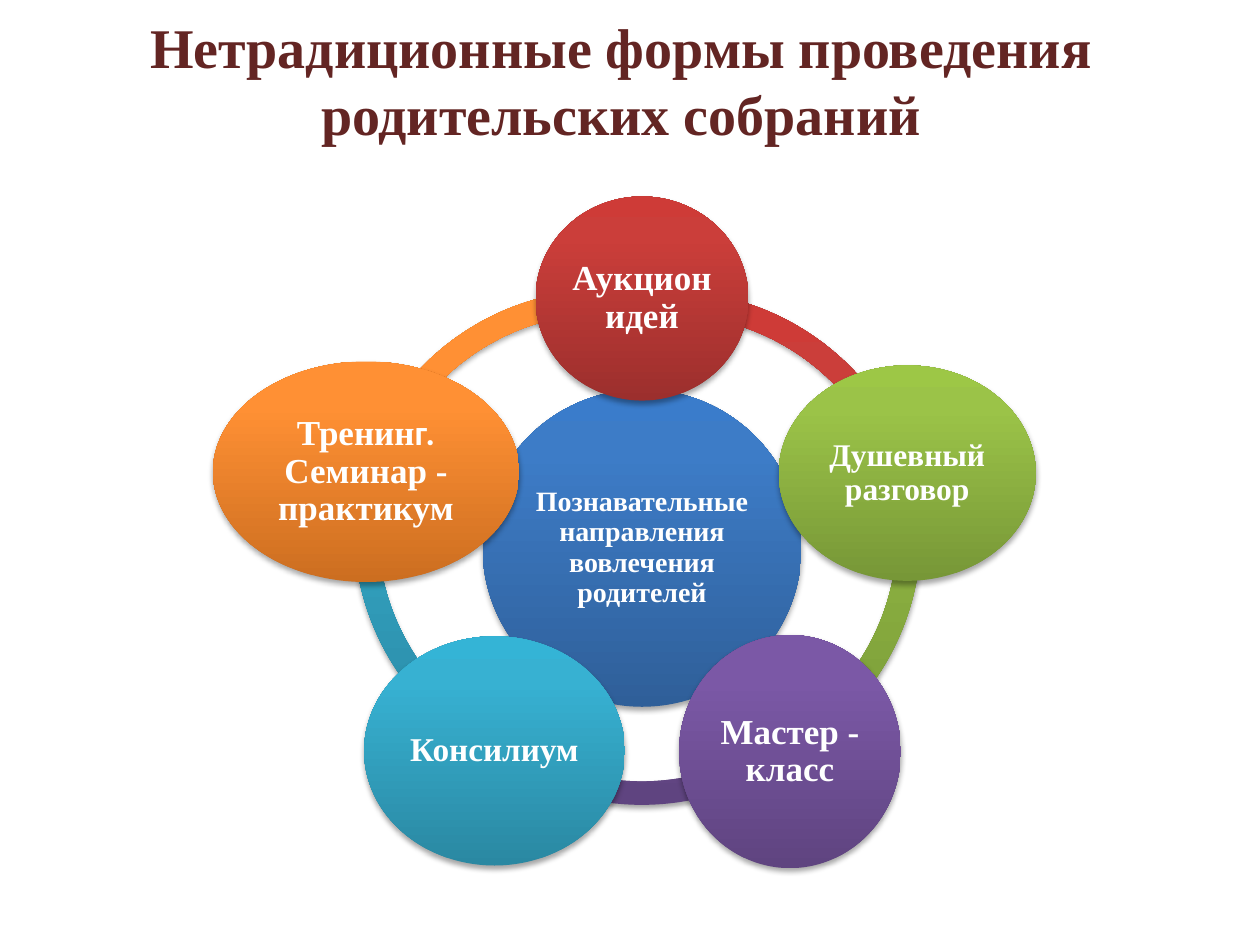
from dataclasses import dataclass, field

import lxml.etree
import pptx
import pptx.dml.color
import pptx.enum.shapes
import pptx.enum.text
import pptx.oxml.ns
import pptx.util

Pt = pptx.util.Pt
RGB = pptx.dml.color.RGBColor.from_string
SHAPE = pptx.enum.shapes.MSO_SHAPE
MIDDLE = pptx.enum.text.MSO_ANCHOR.MIDDLE
CENTER = pptx.enum.text.PP_ALIGN.CENTER


@dataclass(frozen=True)
class Theme:
    font: str = "Times New Roman"
    accent_font: str = "Calibri"
    title_size: int = 32
    title_color: str = "632523"
    label_color: str = "FFFFFF"
    shadow_color: str = "000000"
    # Gradient stops at 0, 80 and 100 percent, from bottom to top.
    gradients: dict = field(default_factory=lambda: {
        "blue": ("2F5F99", "3D7CC7", "3A7CCB"),
        "red": ("9C2F2D", "CB3E3A", "CE3B37"),
        "green": ("779737", "9BC348", "9DC746"),
        "purple": ("5F4480", "7B58A6", "7C57A8"),
        "teal": ("2A88A2", "37B1D2", "34B4D6"),
        "orange": ("CC6E20", "FF9034", "FF9136"),
    })


THEME = Theme()
ARC_SIZE = 293
ARC_THICKNESS = 0.046

# Colour, left, top, start and end of each ring segment.
RING = [
    ("orange", 79.4, 57.6, 118.25, 166.98),
    ("teal", 82.3, 47.5, 70.5, 115.85),
    ("purple", 100.3, 59, 32.4, 75.6),
    ("green", 113.3, 50.4, 207.45, 36.08),
    ("red", 115.4, 58.3, 158.4, 205.57),
]

# Colour, left, top, width, height, type size, label runs (text, font).
CIRCLES = [
    ("blue", 155.8, 114.5, 182.2, 181.4, 16,
     [("Познавательные направления вовлечения родителей", THEME.font)]),
    ("red", 186, 4.3, 121.7, 116.6, 20, [("Аукцион идей", THEME.font)]),
    ("green", 325, 100.8, 146.9, 123.1, 18, [("Душевный разговор", THEME.font)]),
    ("purple", 268.1, 254.9, 126.7, 133.2, 20, [("Мастер - класс", THEME.font)]),
    ("teal", 88.1, 255.6, 149, 131, 19, [("Консилиум", THEME.font)]),
    ("orange", 1.7, 98.6, 175, 126, 20,
     [("Тренин", THEME.font), ("г. ", THEME.accent_font),
      ("Семинар - практикум", THEME.font)]),
]


def add_xml(parent, tag, **attributes):
    return lxml.etree.SubElement(parent, pptx.oxml.ns.qn(tag), attributes)


def add_color(parent, color):
    return add_xml(parent, "a:srgbClr", val=color)


def style_glossy(shape, color):
    """Give the shape a three-stop vertical gradient and a soft shadow below."""
    shape.fill.gradient()
    shape.fill.gradient_angle = 90
    shape.line.fill.background()
    shape.shadow.inherit = False

    properties = shape._element.spPr
    stops = properties.find(".//" + pptx.oxml.ns.qn("a:gsLst"))
    for stop in list(stops):
        stops.remove(stop)
    for position, stop_color in zip((0, 80, 100), THEME.gradients[color]):
        add_color(add_xml(stops, "a:gs", pos=str(position * 1000)), stop_color)

    effects = properties.find(pptx.oxml.ns.qn("a:effectLst"))
    shadow = add_xml(effects, "a:outerShdw", blurRad=str(Pt(3.1)), dist=str(Pt(1.8)),
                     dir="5400000", rotWithShape="0")
    add_xml(add_color(shadow, THEME.shadow_color), "a:alpha", val="35000")


def add_title(slide, left, top, width, height):
    title = slide.shapes.add_textbox(Pt(left), Pt(top), Pt(width), Pt(height))
    frame = title.text_frame
    frame.word_wrap = True
    frame.vertical_anchor = MIDDLE
    paragraph = frame.paragraphs[0]
    paragraph.text = "Нетрадиционные формы проведения родительских собраний"
    paragraph.alignment = CENTER
    paragraph.font.name = THEME.font
    paragraph.font.size = Pt(THEME.title_size)
    paragraph.font.bold = True
    paragraph.font.color.rgb = RGB(THEME.title_color)


def write_label(circle, size, runs):
    frame = circle.text_frame
    frame.word_wrap = True
    frame.vertical_anchor = MIDDLE
    frame.margin_left = frame.margin_right = Pt(2)
    frame.margin_top = frame.margin_bottom = Pt(2)
    paragraph = frame.paragraphs[0]
    paragraph.alignment = CENTER
    paragraph.line_spacing = 0.9
    paragraph.font.size = Pt(size)
    paragraph.font.bold = True
    paragraph.font.color.rgb = RGB(THEME.label_color)
    for text, font in runs:
        run = paragraph.add_run()
        run.text = text
        run.font.name = font


def add_radial_diagram(slide, left, top):
    """Draw the ring segments first, then the core and its satellites."""
    diagram = slide.shapes.add_group_shape().shapes

    def add_part(kind, color, x, y, width, height):
        part = diagram.add_shape(kind, Pt(left + x), Pt(top + y), Pt(width), Pt(height))
        style_glossy(part, color)
        return part

    for color, x, y, start, end in RING:
        arc = add_part(SHAPE.BLOCK_ARC, color, x, y, ARC_SIZE, ARC_SIZE)
        for index, value in enumerate((start, end, ARC_THICKNESS)):
            arc.adjustments[index] = value

    for color, x, y, width, height, size, runs in CIRCLES:
        circle = add_part(SHAPE.OVAL, color, x, y, width, height)
        write_label(circle, size, runs)


def main():
    presentation = pptx.Presentation()
    presentation.slide_width = Pt(720)
    presentation.slide_height = Pt(540)
    slide = presentation.slides.add_slide(presentation.slide_layouts[6])
    add_title(slide, 31, 15, 648, 61)
    add_radial_diagram(slide, 120, 108)
    presentation.save("out.pptx")


if __name__ == "__main__":
    main()
